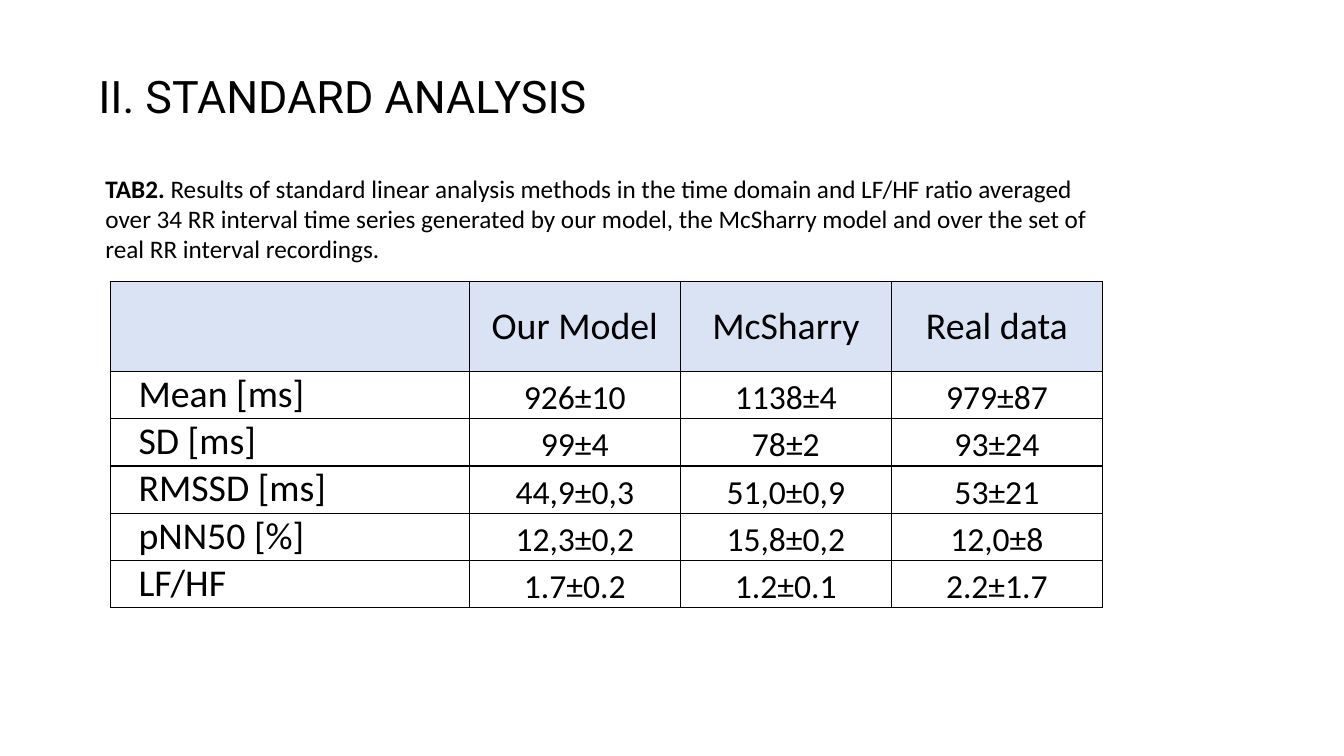
"""Build the standard analysis slide: title, caption and results table."""
from dataclasses import dataclass

import lxml.etree
import pptx
import pptx.dml.color
import pptx.enum.text
import pptx.oxml.ns
import pptx.util

ALIGN = pptx.enum.text.PP_ALIGN
ANCHOR = pptx.enum.text.MSO_ANCHOR
AUTO_SIZE = pptx.enum.text.MSO_AUTO_SIZE

BLACK = pptx.dml.color.RGBColor(0x00, 0x00, 0x00)
HEADER_BLUE = pptx.dml.color.RGBColor(0xDA, 0xE3, 0xF3)
EMU_PER_PX = 9525

HEADERS = ("", "Our Model", "McSharry", "Real data")
RESULTS = (
    ("Mean [ms]", "926±10", "1138±4", "979±87"),
    ("SD [ms]", "99±4", "78±2", "93±24"),
    ("RMSSD [ms]", "44,9±0,3", "51,0±0,9", "53±21"),
    ("pNN50 [%]", "12,3±0,2", "15,8±0,2", "12,0±8"),
    ("LF/HF", "1.7±0.2", "1.2±0.1", "2.2±1.7"),
)
CAPTION = (
    "Results of standard linear analysis methods in the time domain and LF/HF ratio "
    "averaged over 34 RR interval time series generated by our model, the McSharry "
    "model and over the set of real RR interval recordings."
)


@dataclass(frozen=True)
class CellStyle:
    size: int
    align: ALIGN
    anchor: ANCHOR
    spacing: float = 1.0
    indent: int = 0
    filled: bool = False


@dataclass(frozen=True)
class Column:
    width: int
    body: CellStyle


HEADER = CellStyle(27, ALIGN.CENTER, ANCHOR.MIDDLE, filled=True)
LABEL = CellStyle(27, ALIGN.JUSTIFY, ANCHOR.TOP, indent=8)
VALUE = CellStyle(24, ALIGN.CENTER, ANCHOR.MIDDLE, 1.15)
TOP_VALUE = CellStyle(24, ALIGN.CENTER, ANCHOR.TOP, 1.15)
COLUMNS = (Column(342, LABEL), Column(201, VALUE), Column(201, TOP_VALUE), Column(201, VALUE))
ROW_HEIGHTS = (86,) + (43,) * len(RESULTS)


def px(length: int) -> pptx.util.Emu:
    return pptx.util.Emu(length * EMU_PER_PX)


def set_font(para, name: str, size: int) -> None:
    para.font.name = name
    para.font.size = pptx.util.Pt(size)
    para.font.color.rgb = BLACK


def add_borders(cell) -> None:
    properties = cell._tc.get_or_add_tcPr()
    for position, side in enumerate(("a:lnL", "a:lnR", "a:lnT", "a:lnB")):
        line = lxml.etree.Element(pptx.oxml.ns.qn(side), w=str(pptx.util.Pt(1)))
        fill = lxml.etree.SubElement(line, pptx.oxml.ns.qn("a:solidFill"))
        lxml.etree.SubElement(fill, pptx.oxml.ns.qn("a:srgbClr"), val=str(BLACK))
        properties.insert(position, line)


def format_cell(cell, text: str, style: CellStyle) -> None:
    cell.margin_left = cell.margin_right = px(19)
    cell.margin_top = cell.margin_bottom = 0
    cell.vertical_anchor = style.anchor
    if style.filled:
        cell.fill.solid()
        cell.fill.fore_color.rgb = HEADER_BLUE
    else:
        cell.fill.background()
    add_borders(cell)
    para = cell.text_frame.paragraphs[0]
    para.alignment = style.align
    para.line_spacing = style.spacing
    if style.indent:
        para._p.get_or_add_pPr().set("marL", str(px(style.indent)))
    if text:
        para.add_run().text = text
    set_font(para, "Calibri", style.size)


def format_title(title) -> None:
    title.left, title.top, title.width, title.height = px(84), px(56), px(524), px(66)
    frame = title.text_frame
    frame.text = "II. STANDARD ANALYSIS"
    frame.auto_size = AUTO_SIZE.NONE
    frame.word_wrap = False
    frame.vertical_anchor = ANCHOR.BOTTOM
    para = frame.paragraphs[0]
    para.alignment = ALIGN.LEFT
    para.line_spacing = 0.9
    set_font(para, "Roboto", 32)


def add_results_table(page) -> None:
    frame = page.shapes.add_table(
        len(ROW_HEIGHTS), len(COLUMNS), px(105), px(268),
        px(sum(column.width for column in COLUMNS)), px(sum(ROW_HEIGHTS)),
    )
    table = frame.table
    table.first_row = table.horz_banding = False
    for row, height in zip(table.rows, ROW_HEIGHTS):
        row.height = px(height)
    for index, column in enumerate(COLUMNS):
        table.columns[index].width = px(column.width)
        format_cell(table.cell(0, index), HEADERS[index], HEADER)
        for number, values in enumerate(RESULTS, start=1):
            format_cell(table.cell(number, index), values[index], column.body)


def add_caption(page) -> None:
    box = page.shapes.add_textbox(px(91), px(160), px(956), px(97))
    box.text_frame.word_wrap = True
    box.text_frame.auto_size = AUTO_SIZE.SHAPE_TO_FIT_TEXT
    para = box.text_frame.paragraphs[0]
    set_font(para, "Calibri", 18)
    for text, bold in (("TAB2. ", True), (CAPTION, False)):
        span = para.add_run()
        span.text = text
        span.font.bold = bold


def main() -> None:
    deck = pptx.Presentation()
    deck.slide_width, deck.slide_height = px(1280), px(720)
    page = deck.slides.add_slide(deck.slide_layouts[5])
    format_title(page.shapes.title)
    add_results_table(page)
    add_caption(page)
    deck.save("out.pptx")


if __name__ == "__main__":
    main()
